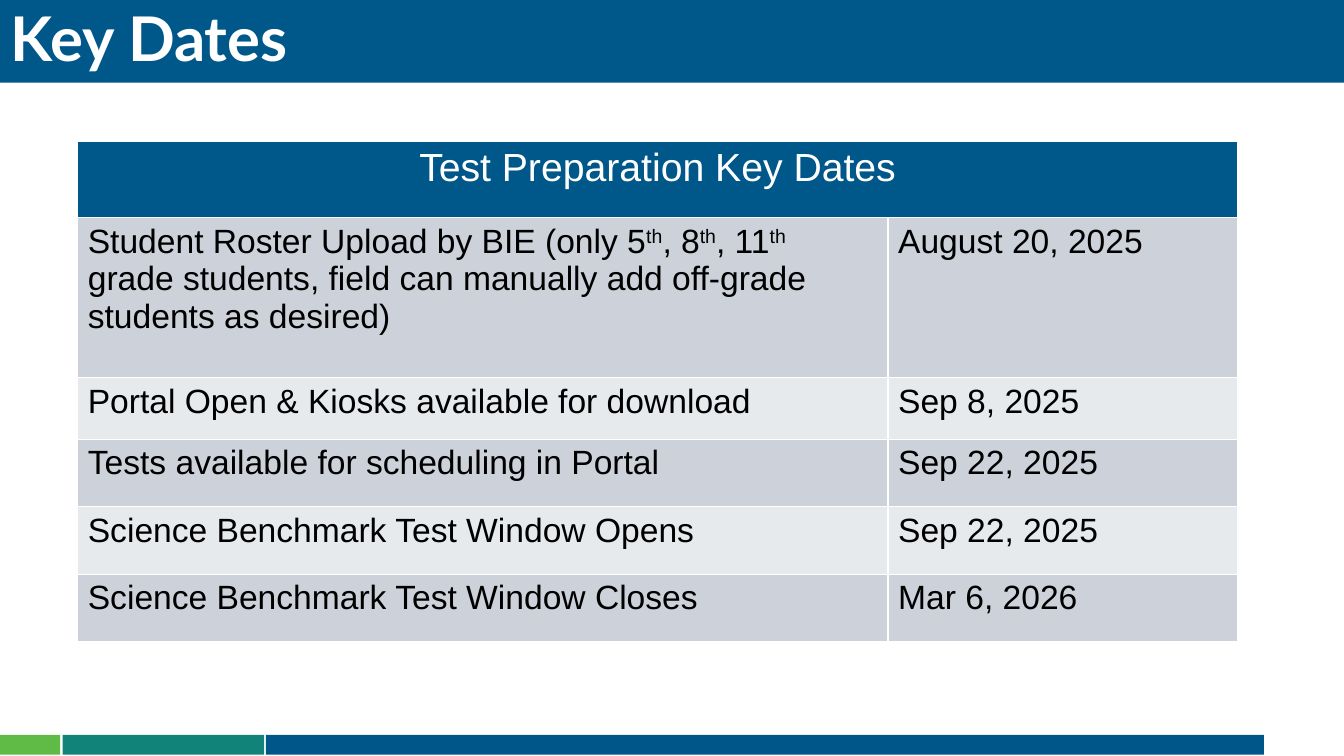
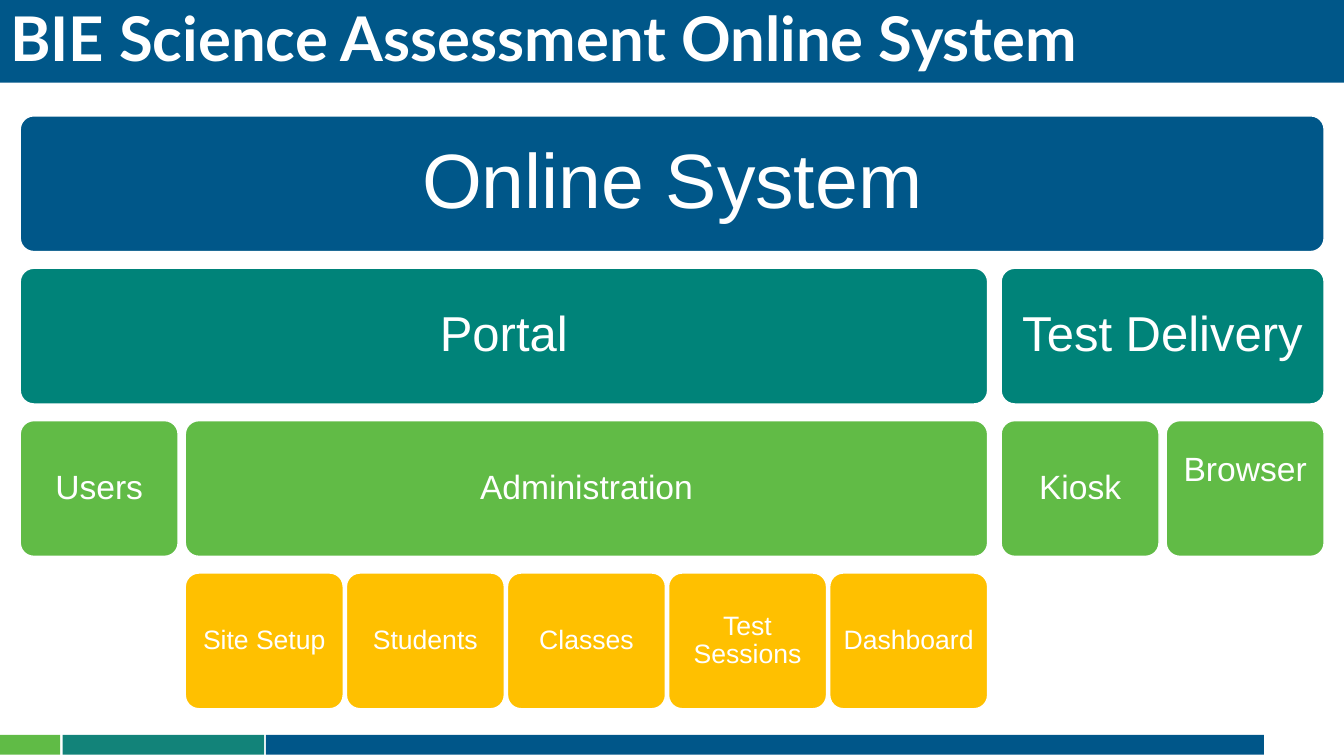
from pptx import Presentation
from pptx.dml.color import RGBColor
from pptx.enum.shapes import MSO_SHAPE
from pptx.enum.text import MSO_ANCHOR, MSO_AUTO_SIZE, PP_ALIGN
from pptx.util import Cm, Pt

COLORS = {
    "blue": "005789", "band blue": "005689", "teal": "008379",
    "band teal": "128379", "green": "61BB46", "band green": "60BB46",
    "gold": "FFC000", "dark row": "CCD1DA", "light row": "E7EAED",
    "white": "FFFFFF", "black": "000000",
}
SLIDE_WIDTH, SLIDE_HEIGHT = 33.87, 19.05

# Footer bands: colour, left, width
BANDS = [("band green", 0, 1.52), ("band teal", 1.58, 5.08),
         ("band blue", 6.7, 25.15)]

# Tree levels: colour, text size, text inset, gap between siblings
LEVELS = [("blue", 55, 0.58, 0), ("teal", 35, 0.38, 0.34),
          ("green", 24, 0.25, 0.18), ("gold", 19, 0.2, 0.08)]
LEAF_WIDTH, BOX_HEIGHT, LEVEL_STEP = 3.98, 3.42, 3.84
BROWSER_LIFT = 0.92

KEY_DATES = [
    ("Student Roster Upload by BIE (only 5^th^, 8^th^, 11^th^ grade students, "
     "field can manually add off-grade students as desired)",
     "August 20, 2025"),
    ("Portal Open & Kiosks available for download", "Sep 8, 2025"),
    ("Tests available for scheduling in Portal", "Sep 22, 2025"),
    ("Science Benchmark Test Window Opens", "Sep 22, 2025"),
    ("Science Benchmark Test Window Closes", "Mar 6, 2026"),
]

ONLINE_SYSTEM = ("Online System", [
    ("Portal", [
        ("Users", []),
        ("Administration", [(name, []) for name in (
            "Site Setup", "Students", "Classes", "Test Sessions",
            "Dashboard")]),
    ]),
    ("Test Delivery", [("Kiosk", []), ("Browser", [])]),
])


def rgb(color):
    return RGBColor.from_string(COLORS[color])


def tree_width(node, level=0):
    """Width in cm of a box that spans all its children."""
    children = node[1]
    if not children:
        return LEAF_WIDTH
    gap = LEVELS[level + 1][3]
    return (sum(tree_width(child, level + 1) for child in children)
            + gap * (len(children) - 1))


class Deck:
    def __init__(self):
        self.presentation = Presentation()
        self.presentation.slide_width = Cm(SLIDE_WIDTH)
        self.presentation.slide_height = Cm(SLIDE_HEIGHT)
        self.slide = None

    def add_slide(self, heading):
        layout = self.presentation.slide_layouts.get_by_name("Title Only")
        self.slide = self.presentation.slides.add_slide(layout)
        for color, left, width in BANDS:
            self.box(MSO_SHAPE.RECTANGLE, color, left, 18.52, width, 0.5)
        self.title(heading)

    def title(self, heading):
        title = self.slide.shapes.title
        title.left, title.top = Cm(0), Cm(0)
        title.width, title.height = Cm(SLIDE_WIDTH), Cm(2.08)
        title.fill.solid()
        title.fill.fore_color.rgb = rgb("blue")
        frame = title.text_frame
        frame.auto_size = MSO_AUTO_SIZE.NONE
        frame.vertical_anchor = MSO_ANCHOR.MIDDLE
        self.text(frame, heading, 44, "white", PP_ALIGN.LEFT, 0.9,
                  font="Lato", bold=True)

    def text(self, frame, wording, size, color, align=PP_ALIGN.LEFT,
             spacing=1.0, font="Arial", bold=False):
        """Fill a text frame; wording between carets becomes superscript."""
        paragraph = frame.paragraphs[0]
        paragraph.alignment = align
        paragraph.line_spacing = spacing
        paragraph.font.name = font
        paragraph.font.size = Pt(size)
        paragraph.font.bold = bold
        paragraph.font.color.rgb = rgb(color)
        for index, part in enumerate(wording.split("^")):
            run = paragraph.add_run()
            run.text = part
            if index % 2:
                run._r.get_or_add_rPr().set("baseline", "30000")

    def box(self, preset, color, left, top, width, height):
        box = self.slide.shapes.add_shape(
            preset, Cm(left), Cm(top), Cm(width), Cm(height))
        box.shadow.inherit = False
        box.fill.solid()
        box.fill.fore_color.rgb = rgb(color)
        box.line.fill.background()
        return box

    def tree(self, node, left, top, level=0):
        """Draw a box and, below it, the boxes of its children."""
        label, children = node
        color, size, inset, _ = LEVELS[level]
        box = self.box(MSO_SHAPE.ROUNDED_RECTANGLE, color, left, top,
                       tree_width(node, level), BOX_HEIGHT)
        box.adjustments[0] = 0.1
        box.line.color.rgb = rgb("white")
        box.line.width = Pt(1)
        frame = box.text_frame
        frame.word_wrap = True
        frame.vertical_anchor = MSO_ANCHOR.MIDDLE
        frame.margin_left = frame.margin_right = Cm(inset)
        frame.margin_top = Cm(inset)
        lift = BROWSER_LIFT if label == "Browser" else 0
        frame.margin_bottom = Cm(inset + lift)
        self.text(frame, label, size, "white", PP_ALIGN.CENTER, 0.9)
        for child in children:
            self.tree(child, left, top + LEVEL_STEP, level + 1)
            left += tree_width(child, level + 1) + LEVELS[level + 1][3]

    def dates_table(self, heading, dates, left, top, widths, heights):
        table = self.slide.shapes.add_table(
            len(heights), len(widths), Cm(left), Cm(top),
            Cm(sum(widths)), Cm(sum(heights))).table
        for column, width in zip(table.columns, widths):
            column.width = Cm(width)
        for row, height in zip(table.rows, heights):
            row.height = Cm(height)
        table.cell(0, 0).merge(table.cell(0, 1))
        self.cell(table.cell(0, 0), heading, "blue", 28, "white",
                  PP_ALIGN.CENTER)
        for index, entry in enumerate(dates, 1):
            fill = "dark row" if index % 2 else "light row"
            for column, wording in enumerate(entry):
                self.cell(table.cell(index, column), wording, fill, 24,
                          "black")

    def cell(self, cell, wording, fill, size, color, align=PP_ALIGN.LEFT):
        cell.fill.solid()
        cell.fill.fore_color.rgb = rgb(fill)
        self.text(cell.text_frame, wording, size, color, align)


def main():
    deck = Deck()
    deck.add_slide("Key Dates")
    deck.dates_table("Test Preparation Key Dates", KEY_DATES, 1.96, 3.56,
                     [20.42, 8.8], [1.93, 4.03, 1.55, 1.7, 1.7, 1.7])

    deck.add_slide("BIE Science Assessment Online System")
    deck.tree(ONLINE_SYSTEM, 0.51, 2.92)
    deck.presentation.save("out.pptx")


if __name__ == "__main__":
    main()
